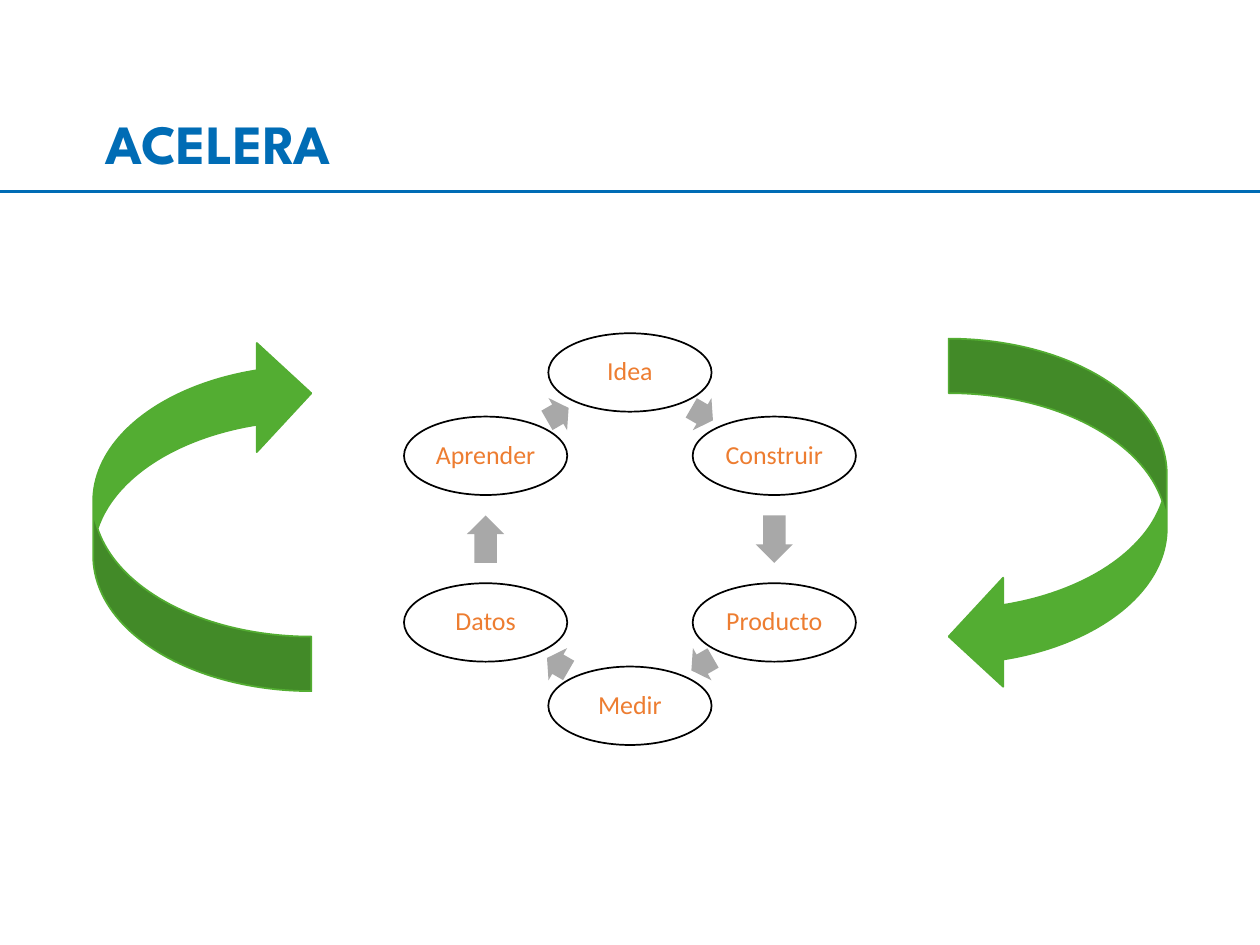
import math
from dataclasses import dataclass

from lxml import etree
from pptx import Presentation
from pptx.dml.color import RGBColor
from pptx.enum import shapes, text
from pptx.oxml import ns
from pptx.util import Cm, Pt


@dataclass(frozen=True)
class Theme:
    blue: str = "006CB5"
    green: str = "53AD32"
    gray: str = "A8A8A8"
    orange: str = "ED7D31"
    black: str = "000000"
    white: str = "FFFFFF"
    title_font: str = "League Spartan"
    body_font: str = "Calibri"
    title_size: int = 32
    body_size: int = 15


THEME = Theme()
STEPS = ["Idea", "Construir", "Producto", "Medir", "Datos", "Aprender"]


def add_shape(s, kind, box, fill, line=None):
    sp = s.shapes.add_shape(kind, *map(Cm, box))
    sp.shadow.inherit = False
    sp.fill.solid()
    sp.fill.fore_color.rgb = RGBColor.from_string(fill)
    if line:
        sp.line.color.rgb = RGBColor.from_string(line)
        sp.line.width = Pt(1)
    else:
        sp.line.fill.background()
    return sp


def write(tf, words, font, size, color, bold=False):
    tf.text = words
    f = tf.paragraphs[0].runs[0].font
    f.name, f.size, f.bold = font, Pt(size), bold
    f.color.rgb = RGBColor.from_string(color)


def add_header(s, box, words):
    left, top, width, height = box
    rule = s.shapes.add_connector(shapes.MSO_CONNECTOR.STRAIGHT,
                                  Cm(left), Cm(top + height), Cm(left + width), Cm(top + height))
    rule.line.color.rgb = RGBColor.from_string(THEME.blue)
    rule.line.width = Pt(2)
    etree.SubElement(rule._element.spPr, ns.qn("a:effectLst"))
    title = s.shapes.add_textbox(Cm(left + 1.9), Cm(top + 2.11), Cm(9.9), Cm(1.63))
    tf = title.text_frame
    tf.word_wrap = True
    tf.auto_size = text.MSO_AUTO_SIZE.SHAPE_TO_FIT_TEXT
    write(tf, words, THEME.title_font, THEME.title_size, THEME.blue, True)


def add_step(s, box, words):
    sp = add_shape(s, shapes.MSO_SHAPE.OVAL, box, THEME.white, THEME.black)
    tf = sp.text_frame
    tf.margin_left = tf.margin_right = tf.margin_top = tf.margin_bottom = Cm(0.05)
    tf.vertical_anchor = text.MSO_ANCHOR.MIDDLE
    tf.word_wrap = True
    write(tf, words, THEME.body_font, THEME.body_size, THEME.orange)
    p = tf.paragraphs[0]
    p.alignment = text.PP_ALIGN.CENTER
    p.line_spacing = 0.9


def add_cycle(s, box, steps):
    left, top, width, height = box
    step_w, step_h, arrow_h = 3.33, 1.6, 0.76
    radius = (height - step_h) / 2
    turn = 360 / len(steps)
    apothem = radius * math.cos(math.radians(turn / 2))

    def place(distance, angle, w, h):
        a = math.radians(angle)
        return (left + width / 2 + distance * math.sin(a) - w / 2,
                top + height / 2 - distance * math.cos(a) - h / 2, w, h)

    for i, words in enumerate(steps):
        add_step(s, place(radius, i * turn, step_w, step_h), words)
        angle = (i + 0.5) * turn
        arrow_w = 0.97 if i % 3 == 1 else 0.51
        arrow = add_shape(s, shapes.MSO_SHAPE.RIGHT_ARROW,
                          place(apothem, angle, arrow_w, arrow_h), THEME.gray)
        arrow.adjustments[0] = 0.6
        arrow.adjustments[1] = 0.5
        arrow.rotation = angle


def add_side_arrows(s, box):
    left, top, width, height = box
    arrow_w = 4.45
    for x, rotation in ((left, 180), (left + width - arrow_w, 0)):
        sp = add_shape(s, shapes.MSO_SHAPE.CURVED_LEFT_ARROW, (x, top, arrow_w, height),
                       THEME.green, THEME.green)
        for i, value in enumerate((0.25, 0.5, 0.25)):
            sp.adjustments[i] = value
        sp.rotation = rotation


def main():
    prs = Presentation()
    prs.slide_width, prs.slide_height = Cm(25.7), Cm(19.28)
    s = prs.slides.add_slide(prs.slide_layouts[6])
    add_cycle(s, (8.25, 6.8, 9.2, 8.4), STEPS)
    add_side_arrows(s, (1.9, 6.91, 21.9, 7.19))
    add_header(s, (0, 0, 25.7, 3.91), "ACELERA")
    prs.save("out.pptx")


if __name__ == "__main__":
    main()
